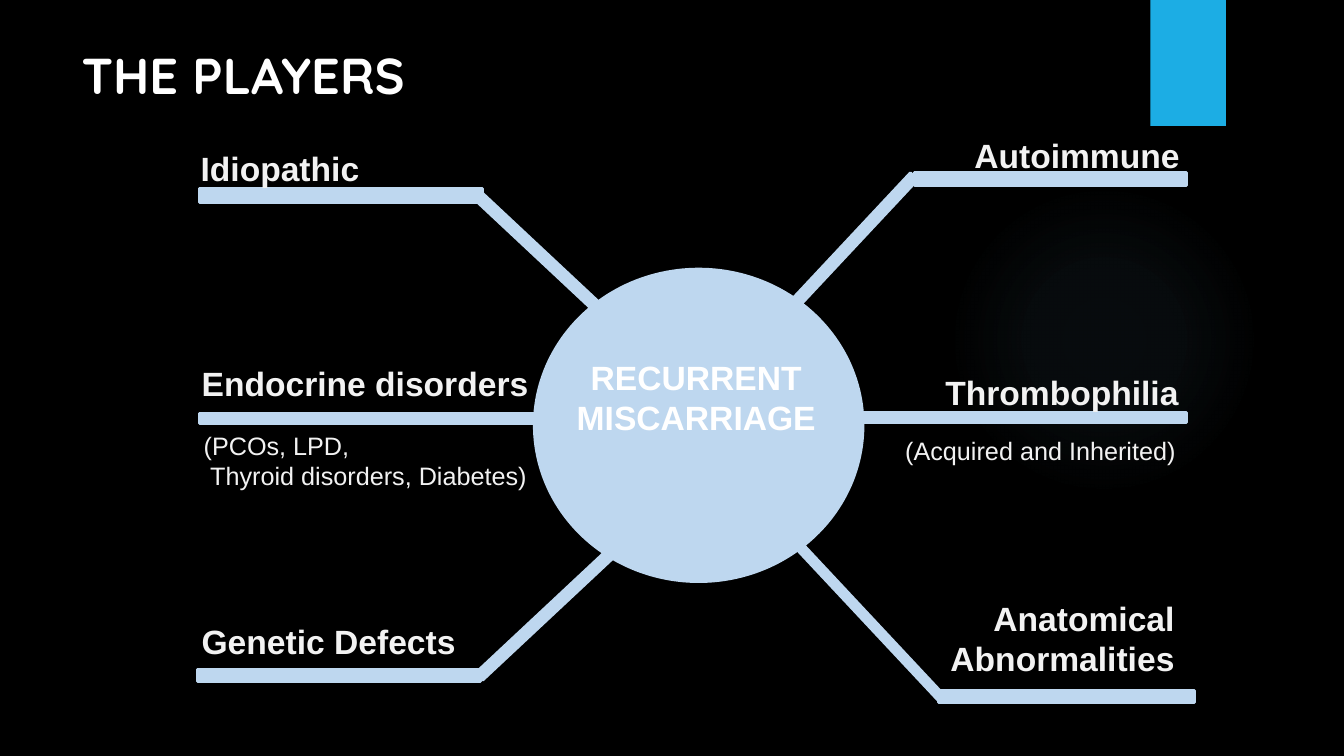
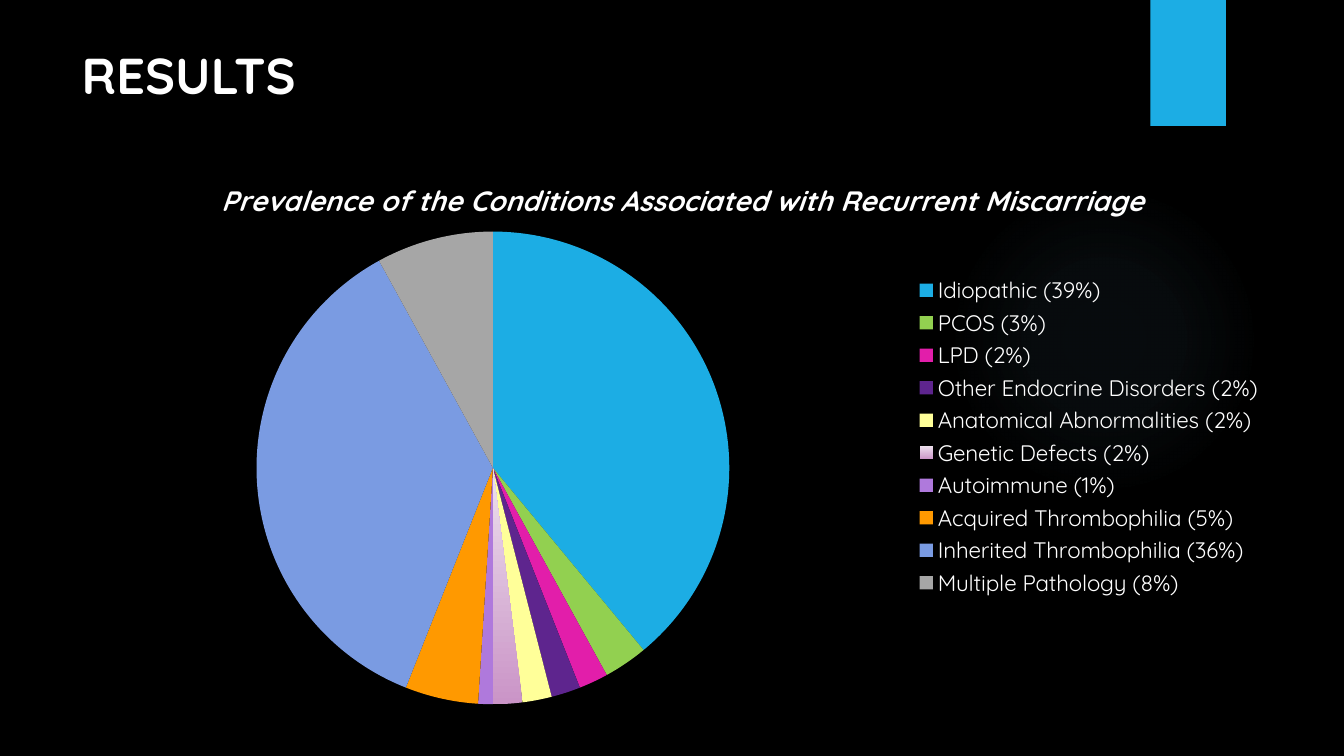
from typing import NamedTuple

from lxml import etree
from pptx import Presentation
from pptx.chart.data import CategoryChartData
from pptx.dml.color import RGBColor
from pptx.enum.chart import XL_CHART_TYPE, XL_LEGEND_POSITION
from pptx.enum.shapes import MSO_SHAPE
from pptx.enum.text import MSO_ANCHOR, PP_ALIGN
from pptx.oxml import parse_xml
from pptx.oxml.ns import nsdecls, qn
from pptx.util import Inches, Pt

RECTANGLE, OVAL = MSO_SHAPE.RECTANGLE, MSO_SHAPE.OVAL
LEFT, CENTER, RIGHT = PP_ALIGN.LEFT, PP_ALIGN.CENTER, PP_ALIGN.RIGHT
TOP = MSO_ANCHOR.TOP
PIE, LEGEND_RIGHT = XL_CHART_TYPE.PIE, XL_LEGEND_POSITION.RIGHT
TITLE_ONLY = 5

COLORS = {
    "page": "000000",
    "band": "1CADE4",
    "glow": "70A1C0",
    "hub": "BED7EF",
    "white": "FFFFFF",
    "label": "F2F2F2",
}
TITLE_FONT, LABEL_FONT = "Quicksand", "Arial"


class Box(NamedTuple):
    left: float
    top: float
    width: float
    height: float

    def inside(self, outer):
        return Box(outer.left + self.left, outer.top + self.top, self.width, self.height)

    def lengths(self):
        return [Inches(value) for value in self]


TITLE_BOX = Box(0.71, 0.5, 10.29, 0.68)
GLOW_BOX = Box(9.41, 1.83, 3.08, 3.08)
BAND_BOX = Box(11.41, 0, 0.75, 1.25)
DIAGRAM_BOX = Box(1.95, 1.3, 9.9, 5.67)
CHART_BOX = Box(0.71, 1.45, 11.94, 5.65)

# Places below are relative to the diagram box
HUB = Box(3.35, 1.37, 3.26, 3.1)
ARMS = [  # place, rotation
    (Box(0.03, 0.57, 2.81, 0.14), 0),
    (Box(2.29, 1.73, 3.43, 0.1), 43.1),
    (Box(0.03, 2.8, 3.43, 0.1), 0),
    (Box(0.01, 5.34, 2.81, 0.12), 0),
    (Box(2.34, 4.19, 3.43, 0.1), -43.1),
    (Box(7.12, 0.41, 2.7, 0.13), 0),
    (Box(4.23, 1.65, 3.43, 0.1), -46.9),
    (Box(6.39, 2.79, 3.43, 0.1), 0),
    (Box(7.36, 5.55, 2.54, 0.12), 0),
    (Box(4.24, 4.22, 3.74, 0.08), 46.9),
]
HEADINGS = [  # place, lines, alignment
    (Box(0, 0.13, 1.76, 0.48), ["Idiopathic"], LEFT),
    (Box(0.01, 2.26, 3.63, 0.48), ["Endocrine disorders"], LEFT),
    (Box(0.01, 4.82, 2.93, 0.48), ["Genetic Defects"], LEFT),
    (Box(7.41, 0, 2.38, 0.48), ["Autoimmune"], RIGHT),
    (Box(6.68, 2.35, 3.1, 0.48), ["Thrombophilia"], RIGHT),
    (Box(7.28, 4.59, 2.46, 0.89), ["Anatomical", "Abnormalities"], RIGHT),
]
DETAILS = [
    (Box(0.03, 2.93, 3.41, 0.69), ["(PCOs, LPD,", " Thyroid disorders, Diabetes)"], LEFT),
    (Box(6.46, 2.98, 3.29, 0.38), ["(Acquired and Inherited)"], RIGHT),
]
HUB_LABEL = Box(3.45, 2.2, 3.01, 0.85)

CHART_TITLE = "Prevalence of the Conditions Associated with Recurrent Miscarriage"
CONDITIONS = [  # name, percent, colour or gradient pair
    ("Idiopathic", 39, "1CADE4"),
    ("PCOS", 3, "92D050"),
    ("LPD", 2, "E21EAA"),
    ("Other Endocrine Disorders", 2, "5E258E"),
    ("Anatomical Abnormalities", 2, "FFFF99"),
    ("Genetic Defects", 2, ("CA94C7", "EDE0ED")),
    ("Autoimmune", 1, "AF79DC"),
    ("Acquired Thrombophilia", 5, "FF9900"),
    ("Inherited Thrombophilia", 36, "7A9BE2"),
    ("Multiple Pathology", 8, "A6A6A6"),
]


def rgb(value):
    return RGBColor.from_string(value)


def style_font(font, size, color, name=TITLE_FONT, bold=False, italic=False):
    font.size, font.name = Pt(size), name
    font.bold, font.italic = bold, italic
    font.color.rgb = rgb(color)


def write_lines(frame, lines, align=LEFT, spacing=None, **style):
    for index, line in enumerate(lines):
        para = frame.paragraphs[0] if index == 0 else frame.add_paragraph()
        para.alignment = align
        if spacing:
            para.line_spacing = spacing
        span = para.add_run()
        span.text = line
        style_font(span.font, **style)


def add_label(page, box, lines, **style):
    frame = page.shapes.add_textbox(*box.lengths()).text_frame
    frame.word_wrap = True
    frame.margin_left = frame.margin_right = Inches(0.04)
    frame.margin_top = frame.margin_bottom = Inches(0.04)
    write_lines(frame, lines, **style)


def add_block(page, kind, box, color, outline=0, rotation=0):
    shape = page.shapes.add_shape(kind, *box.lengths())
    shape.shadow.inherit = False
    shape.rotation = rotation
    shape.fill.solid()
    shape.fill.fore_color.rgb = rgb(color)
    if outline:
        shape.line.color.rgb = rgb(color)
        shape.line.width = Pt(outline)
    else:
        shape.line.fill.background()
    return shape


def fade_out(shape, color, stops):
    """Give the shape a round gradient of (position, opacity) stops in percent."""
    marks = "".join(
        f'<a:gs pos="{position * 1000}"><a:srgbClr val="{color}">'
        f'<a:alpha val="{opacity * 1000}"/></a:srgbClr></a:gs>'
        for position, opacity in stops
    )
    gradient = parse_xml(
        f'<a:gradFill {nsdecls("a")}><a:gsLst>{marks}</a:gsLst><a:path path="circle">'
        '<a:fillToRect l="50000" t="50000" r="50000" b="50000"/></a:path></a:gradFill>'
    )
    solid = shape.element.spPr.find(qn("a:solidFill"))
    solid.getparent().replace(solid, gradient)


def dress_master(deck, page):
    """Set the background and move the glow and band onto the master."""
    master = deck.slide_master
    master.background.fill.solid()
    master.background.fill.fore_color.rgb = rgb(COLORS["page"])
    glow = add_block(page, OVAL, GLOW_BOX, COLORS["glow"])
    fade_out(glow, COLORS["glow"], [(0, 7), (36, 6), (69, 0)])
    band = add_block(page, RECTANGLE, BAND_BOX, COLORS["band"])
    for index, shape in enumerate((glow, band)):
        shape.element.nvSpPr.cNvPr.set("id", str(101 + index))
        master.element.cSld.spTree.insert(2 + index, shape.element)


def add_page(deck, title):
    page = deck.slides.add_slide(deck.slide_layouts[TITLE_ONLY])
    holder = page.shapes.title
    holder.left, holder.top, holder.width, holder.height = TITLE_BOX.lengths()
    holder.text_frame.vertical_anchor = TOP
    write_lines(holder.text_frame, [title], spacing=0.8, size=36,
                color=COLORS["white"], bold=True)
    return page


def add_diagram(page, box):
    # Hub and arms
    add_block(page, OVAL, HUB.inside(box), COLORS["hub"], outline=2)
    for place, rotation in ARMS:
        add_block(page, RECTANGLE, place.inside(box), COLORS["hub"], 2, rotation)
    # Labels
    add_label(page, HUB_LABEL.inside(box), ["RECURRENT", "MISCARRIAGE"], align=CENTER,
              size=24, color=COLORS["white"], name=LABEL_FONT, bold=True)
    for labels, size, bold in ((HEADINGS, 24, True), (DETAILS, 18, False)):
        for place, lines, align in labels:
            add_label(page, place.inside(box), lines, align=align, size=size,
                      color=COLORS["label"], name=LABEL_FONT, bold=bold)


def place_part(part, index, inner=False, **fractions):
    """Fix a chart part at fractions (x, y, w, h) of the chart area."""
    for old in part.findall(qn("c:layout")):
        part.remove(old)
    layout = etree.Element(qn("c:layout"))
    manual = etree.SubElement(layout, qn("c:manualLayout"))
    settings = {"layoutTarget": "inner"} if inner else {}
    settings.update(xMode="edge", yMode="edge", **fractions)
    for tag, value in settings.items():
        etree.SubElement(manual, qn(f"c:{tag}")).set("val", str(value))
    part.insert(index, layout)


def add_pie(page, box):
    data = CategoryChartData()
    data.categories = [f"{name} ({percent}%)" for name, percent, _ in CONDITIONS]
    data.add_series(CHART_TITLE, [percent for _, percent, _ in CONDITIONS])
    chart = page.shapes.add_chart(PIE, *box.lengths(), data).chart
    style_font(chart.font, 10, COLORS["white"])
    # Title and legend
    chart.has_title = True
    write_lines(chart.chart_title.text_frame, [CHART_TITLE], align=CENTER, size=20,
                color=COLORS["white"], bold=True, italic=True)
    chart.has_legend = True
    chart.legend.position = LEGEND_RIGHT
    chart.legend.include_in_layout = False
    style_font(chart.legend.font, 16, COLORS["white"])
    # Slices
    plot = chart.plots[0]
    plot.vary_by_categories = True
    for index, (_, _, color) in enumerate(CONDITIONS):
        look = plot.series[0].points[index].format
        look.line.fill.background()
        if isinstance(color, tuple):
            look.fill.gradient()
            look.fill.gradient_angle = 90
            for stop, shade in zip(look.fill.gradient_stops, color):
                stop.color.rgb = rgb(shade)
        else:
            look.fill.solid()
            look.fill.fore_color.rgb = rgb(color)
    # Positions of the parts
    root = chart.element.find(qn("c:chart"))
    place_part(root.find(qn("c:title")), 1, x=0.12, y=0.05)
    place_part(root.find(qn("c:plotArea")), 0, inner=True, x=0.15, y=0.15, w=0.4, h=0.83)
    place_part(root.find(qn("c:legend")), 1, x=0.7, y=0.22, w=0.29, h=0.58)


def main():
    deck = Presentation()
    deck.slide_width, deck.slide_height = Inches(13.33), Inches(7.5)
    players = add_page(deck, "THE PLAYERS")
    dress_master(deck, players)
    add_diagram(players, DIAGRAM_BOX)
    results = add_page(deck, "RESULTS")
    add_pie(results, CHART_BOX)
    deck.save("out.pptx")


if __name__ == "__main__":
    main()
